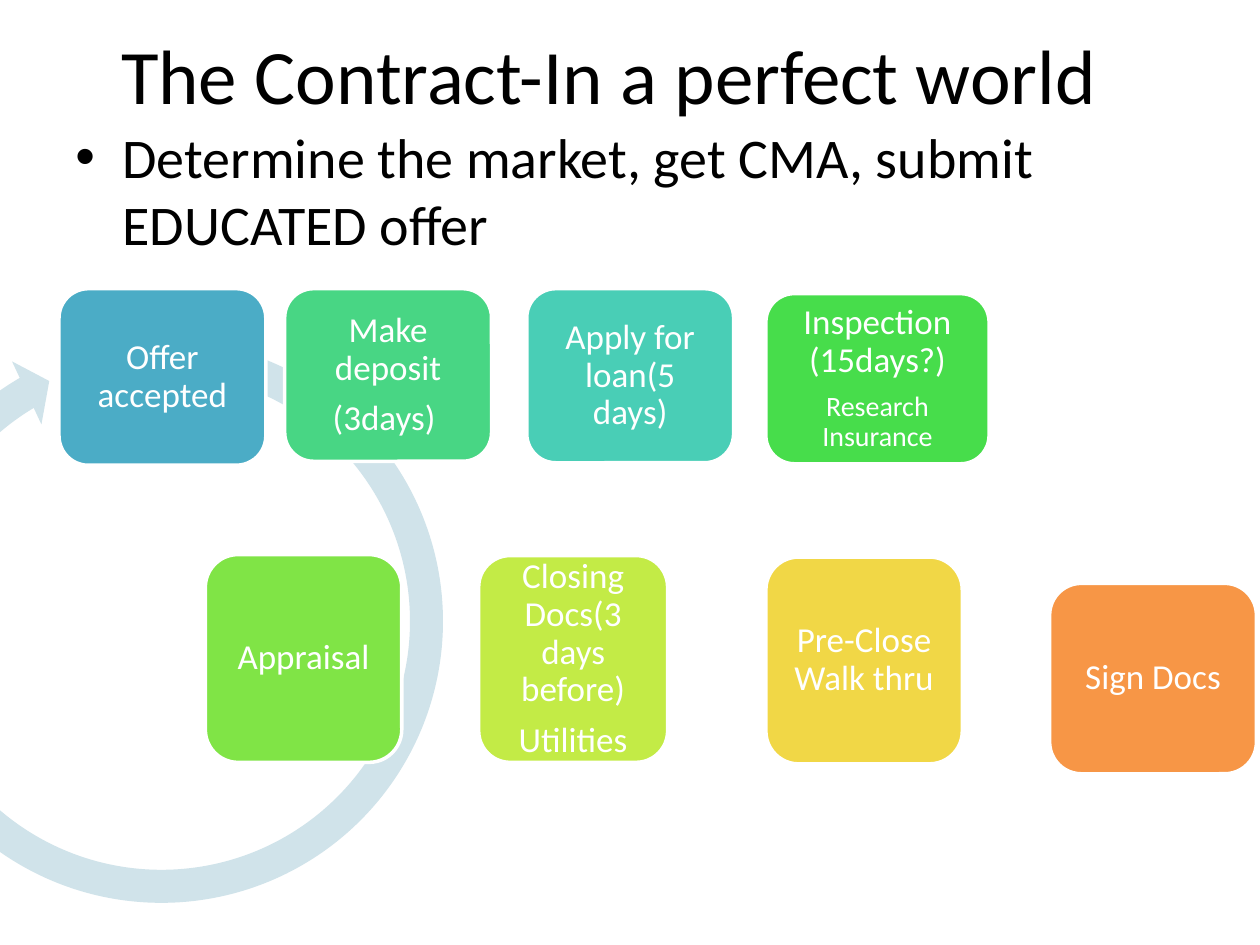
from pptx import Presentation
from pptx.dml.color import RGBColor
from pptx.enum.shapes import MSO_SHAPE as Geo
from pptx.enum.text import MSO_ANCHOR as Anchor, PP_ALIGN as Align
from pptx.oxml.ns import qn
from pptx.util import Cm, Pt
from lxml.etree import SubElement


def rgb(code):
    return RGBColor.from_string(code)


def style(para, size, color):
    para.font.name = "Calibri"
    para.font.size = Pt(size)
    para.font.color.rgb = rgb(color)


deck = Presentation()
deck.slide_width, deck.slide_height = Cm(25.4), Cm(19.05)
slide = deck.slides.add_slide(deck.slide_layouts[5])
shapes = slide.shapes

title = shapes.title
title.left, title.top = Cm(1.7), Cm(0)
title.width, title.height = Cm(21.16), Cm(2.97)
title.text_frame.text = "The Contract-In a perfect world"
title.text_frame.vertical_anchor = Anchor.MIDDLE
head = title.text_frame.paragraphs[0]
head.alignment = Align.CENTER
style(head, 44, "000000")

body = shapes.add_textbox(Cm(1.27), Cm(2.34), Cm(22.86), Cm(15.67))
body.text_frame.word_wrap = True
point = body.text_frame.paragraphs[0]
point.text = "Determine the market, get CMA, submit EDUCATED offer"
props = point._p.get_or_add_pPr()
props.set("marL", str(Cm(0.95)))
props.set("indent", str(-Cm(0.95)))
SubElement(props, qn("a:buFont"), typeface="Arial")
SubElement(props, qn("a:buChar"), char="•")
style(point, 32, "000000")

ring = shapes.add_shape(Geo.CIRCULAR_ARROW, Cm(-2.79), Cm(6.48), Cm(12.09), Cm(12.09))
for i, value in enumerate([0.055, 3.307, 143.681, 170.351, 0.058]):
    ring.adjustments[i] = value
ring.shadow.inherit = False
ring.fill.solid()
ring.fill.fore_color.rgb = rgb("D0E3EA")
ring.line.fill.background()

steps = [
    (1.19, 5.82, 4.17, 3.56, "4BACC6", [("Offer accepted", 20)]),
    (5.74, 5.82, 4.17, 3.48, "48D684", [("Make deposit", 20), ("(3days) ", 20)]),
    (10.62, 5.82, 4.17, 3.51, "49CEB6", [("Apply for loan(5 days)", 20)]),
    (15.44, 5.92, 4.5, 3.43, "47DD4B",
     [("Inspection (15days?)", 20), ("Research Insurance", 16)]),
    (4.14, 11.18, 3.96, 4.19, "80E446", [("Appraisal", 20)]),
    (9.65, 11.2, 3.81, 4.17, "C3EB46",
     [("Closing Docs(3 days before)", 20), ("Utilities", 20)]),
    (15.44, 11.23, 3.96, 4.17, "F1D746", [("Pre-Close Walk thru", 20)]),
    (21.16, 11.76, 4.17, 3.84, "F79646", [("Sign Docs", 20)]),
]
for left, top, width, height, color, lines in steps:
    box = shapes.add_shape(Geo.ROUNDED_RECTANGLE, Cm(left), Cm(top), Cm(width), Cm(height))
    box.shadow.inherit = False
    box.fill.solid()
    box.fill.fore_color.rgb = rgb(color)
    box.line.color.rgb = rgb("FFFFFF")
    box.line.width = Pt(2)
    frame = box.text_frame
    frame.word_wrap = True
    frame.vertical_anchor = Anchor.MIDDLE
    frame.margin_left = frame.margin_right = Cm(0.2)
    frame.margin_top = frame.margin_bottom = Cm(0.2)
    frame.text = "\n".join(words for words, size in lines)
    for para, (words, size) in zip(frame.paragraphs, lines):
        para.alignment = Align.CENTER
        para.line_spacing = 0.9
        para.space_after = Pt(0.35 * size)
        style(para, size, "FFFFFF")

deck.save("out.pptx")
